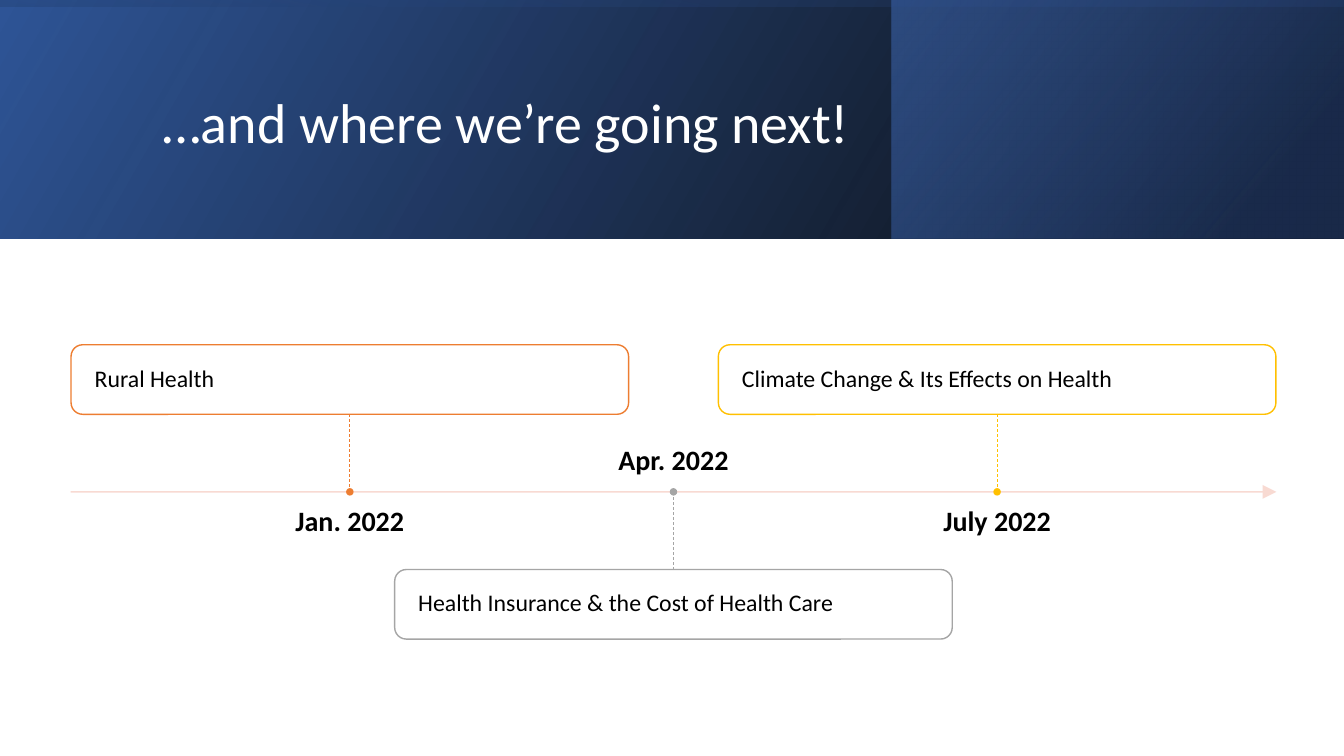
from lxml.etree import SubElement
from pptx import Presentation
from pptx.dml.color import RGBColor
from pptx.enum.dml import MSO_LINE_DASH_STYLE as Dash
from pptx.enum.shapes import MSO_CONNECTOR as Connector, MSO_SHAPE as Shape
from pptx.enum.text import MSO_ANCHOR as Anchor, PP_ALIGN as Align
from pptx.oxml.ns import qn
from pptx.util import Inches, Pt

BLACK = RGBColor(0x00, 0x00, 0x00)
WHITE = RGBColor(0xFF, 0xFF, 0xFF)
NAVY = RGBColor(0x20, 0x38, 0x64)
BLUE = RGBColor(0x2F, 0x55, 0x97)
SKY = RGBColor(0x44, 0x72, 0xC4)
ORANGE = RGBColor(0xED, 0x7D, 0x31)
GREY = RGBColor(0xA5, 0xA5, 0xA5)
GOLD = RGBColor(0xFF, 0xC0, 0x00)
BLUSH = RGBColor(0xF8, 0xD7, 0xCE)
FONT = "Calibri"

# Content
TITLE = "…and where we’re going next!"
EVENTS = [  # date, topic, colour; boxes alternate above and below the axis
    ("Jan. 2022", "Rural Health", ORANGE),
    ("Apr. 2022", "Health Insurance & the Cost of Health Care", GREY),
    ("July 2022", "Climate Change & Its Effects on Health", GOLD),
]

# Layout in inches
WIDTH, HEIGHT = 13.33, 7.5
BANNER = 2.37
PANEL_LEFT = 8.84
AXIS_LEFT, AXIS_RIGHT, AXIS_Y = 0.7, 12.66, 4.88
FIRST_X, STEP_X = 3.47, 3.21
BOX_W, BOX_H, BOX_GAP = 5.53, 0.69, 0.77
DATE_W, DATE_H, DATE_GAP = 4.87, 0.46, 0.15
DOT = 0.06

# Banner layers: left, top, width, height, rotation, gradient angle,
# stops of (position %, colour, opacity %)
LAYERS = [
    (0, 0, WIDTH, BANNER, 0, 330, [(0, BLACK, 96), (100, BLUE, 100)]),
    (PANEL_LEFT, 0, WIDTH - PANEL_LEFT, BANNER, 0, 320,
     [(19, NAVY, 68), (100, SKY, 48)]),
    ((WIDTH - BANNER) / 2, (BANNER - WIDTH) / 2, BANNER, WIDTH, 270, 350,
     [(23, BLUE, 16), (99, BLACK, 45)]),
]


def set_opacity(color_element, percent):
    SubElement(color_element, qn("a:alpha")).set("val", str(percent * 1000))


def add_preset(page, preset, left, top, width, height):
    shape = page.shapes.add_shape(
        preset, Inches(left), Inches(top), Inches(width), Inches(height))
    shape.shadow.inherit = False
    return shape


def add_line(page, x1, y1, x2, y2, color, weight):
    line = page.shapes.add_connector(
        Connector.STRAIGHT, Inches(x1), Inches(y1), Inches(x2), Inches(y2))
    line.line.color.rgb = color
    line.line.width = Pt(weight)
    SubElement(line._element.spPr, qn("a:effectLst"))
    return line


def write(frame, text, size, color, align, anchor, bold=False):
    frame.word_wrap = True
    frame.vertical_anchor = anchor
    frame.text = text
    para = frame.paragraphs[0]
    para.alignment = align
    para.line_spacing = 0.9
    font = para.runs[0].font
    font.name, font.size, font.bold = FONT, Pt(size), bold
    font.color.rgb = color


def set_margins(frame, inset):
    frame.margin_left = frame.margin_right = Inches(inset)
    frame.margin_top = frame.margin_bottom = Inches(inset)


def add_layer(page, left, top, width, height, rotation, angle, stops):
    layer = add_preset(page, Shape.RECTANGLE, left, top, width, height)
    layer.rotation = rotation
    layer._element.spPr.find(qn("a:xfrm")).set("flipH", "1")
    layer.line.fill.background()
    layer.fill.gradient()
    gradient = layer._element.spPr.find(qn("a:gradFill"))
    for child in list(gradient):
        gradient.remove(child)
    stop_list = SubElement(gradient, qn("a:gsLst"))
    for position, color, opacity in stops:
        stop = SubElement(stop_list, qn("a:gs"), pos=str(position * 1000))
        set_opacity(SubElement(stop, qn("a:srgbClr"), val=str(color)), opacity)
    SubElement(gradient, qn("a:lin"), ang=str(angle * 60000), scaled="0")


def add_event(page, index, date, topic, color):
    center = FIRST_X + index * STEP_X
    above = index % 2 == 0

    # Topic box
    box_top = AXIS_Y - BOX_GAP - BOX_H if above else AXIS_Y + BOX_GAP
    box = add_preset(page, Shape.ROUNDED_RECTANGLE,
                     center - BOX_W / 2, box_top, BOX_W, BOX_H)
    box.fill.solid()
    box.fill.fore_color.rgb = WHITE
    set_opacity(box._element.spPr.find(".//" + qn("a:srgbClr")), 90)
    box.line.color.rgb = color
    box.line.width = Pt(1)
    write(box.text_frame, topic, 17, BLACK, Align.LEFT, Anchor.MIDDLE)
    set_margins(box.text_frame, 0.2)

    # Dashed stem from the box to the axis
    stem = add_line(page, center, box_top, center, AXIS_Y, color, 0.5)
    stem.line.dash_style = Dash.DASH
    stem.begin_connect(box, 2 if above else 0)

    # Date on the other side of the axis
    date_top = AXIS_Y + DATE_GAP if above else AXIS_Y - DATE_GAP - DATE_H
    label = page.shapes.add_textbox(
        Inches(center - DATE_W / 2), Inches(date_top),
        Inches(DATE_W), Inches(DATE_H))
    write(label.text_frame, date, 20, BLACK, Align.CENTER,
          Anchor.TOP if above else Anchor.BOTTOM, bold=True)
    set_margins(label.text_frame, 0)

    # Marker
    dot = add_preset(page, Shape.OVAL, center - DOT / 2, AXIS_Y - DOT / 2, DOT, DOT)
    dot.fill.solid()
    dot.fill.fore_color.rgb = color
    dot.line.color.rgb = color
    dot.line.width = Pt(1)


def main():
    deck = Presentation()
    deck.slide_width, deck.slide_height = Inches(WIDTH), Inches(HEIGHT)
    page = deck.slides.add_slide(deck.slide_layouts[5])

    # Banner, with the title brought in front of it
    for layer in LAYERS:
        add_layer(page, *layer)
    title = page.shapes.title
    title.left, title.top = Inches(1.51), Inches(0.38)
    title.width, title.height = Inches(10.63), Inches(1.72)
    write(title.text_frame, TITLE, 40, WHITE, Align.LEFT, Anchor.MIDDLE)
    page.shapes._spTree.append(title._element)

    # Time axis
    axis = add_line(page, AXIS_LEFT, AXIS_Y, AXIS_RIGHT, AXIS_Y, BLUSH, 1)
    outline = axis._element.spPr.find(qn("a:ln"))
    set_opacity(outline.find(".//" + qn("a:srgbClr")), 90)
    SubElement(outline, qn("a:tailEnd"), type="triangle", w="lg", len="lg")

    for index, event in enumerate(EVENTS):
        add_event(page, index, *event)

    deck.save("out.pptx")


if __name__ == "__main__":
    main()
